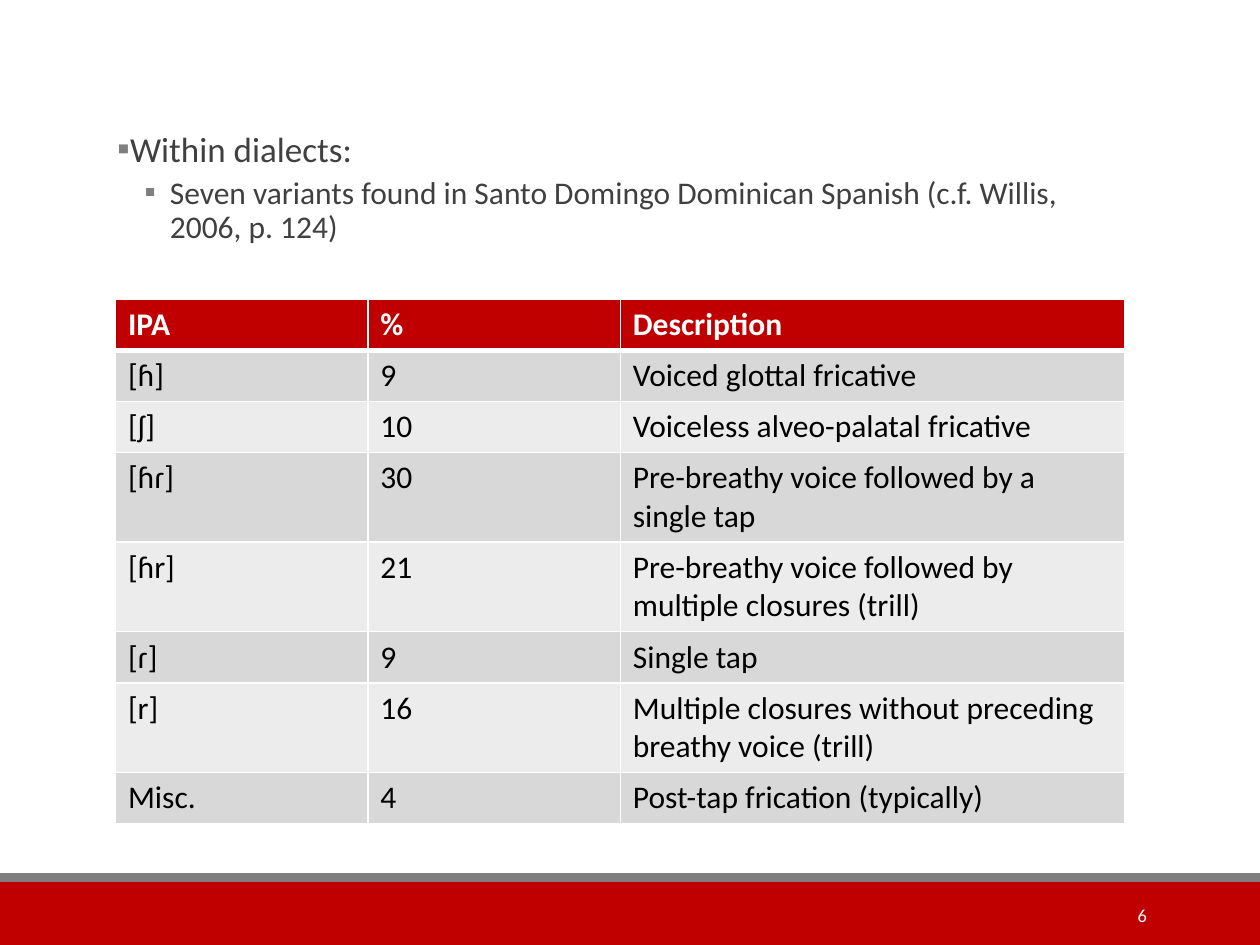
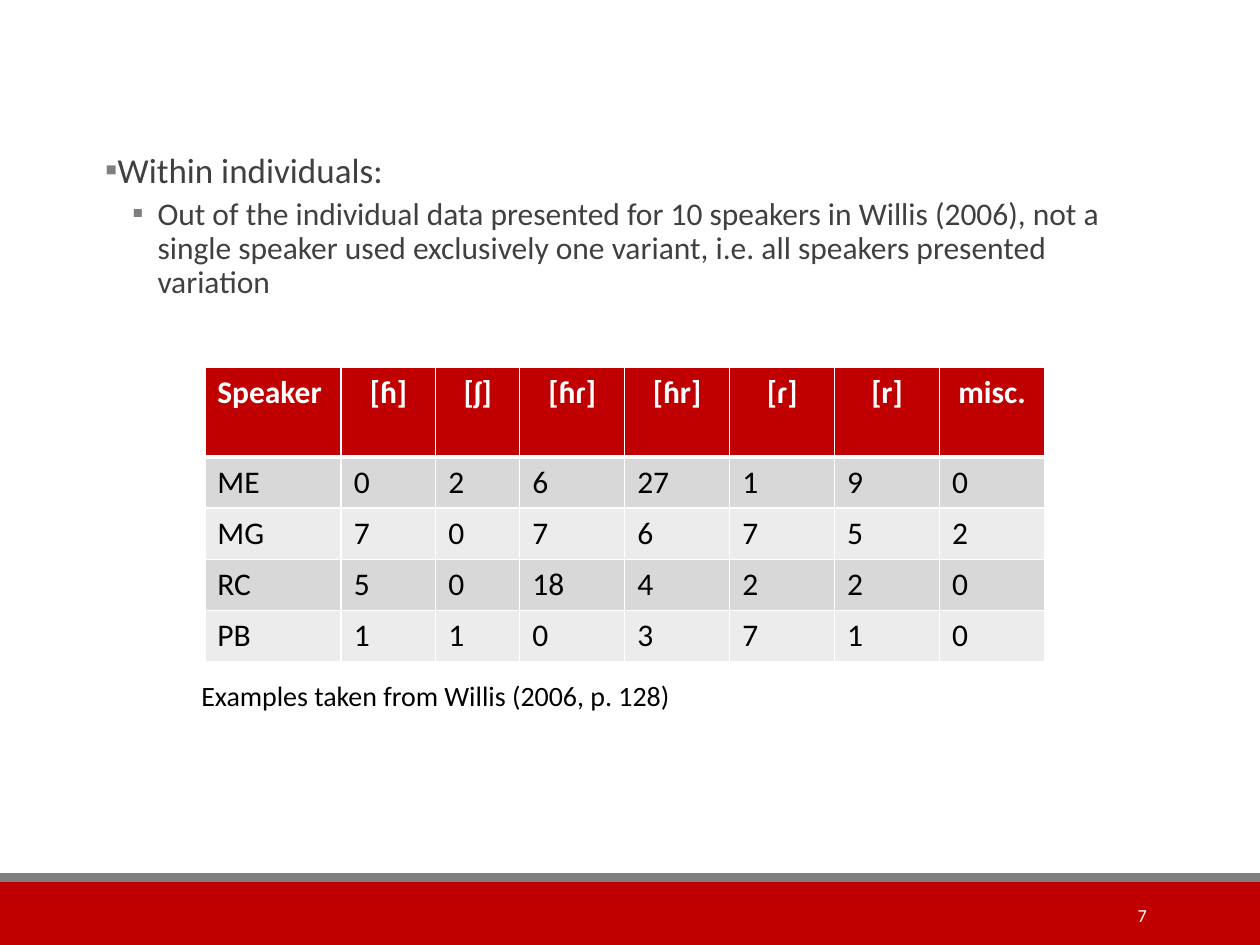
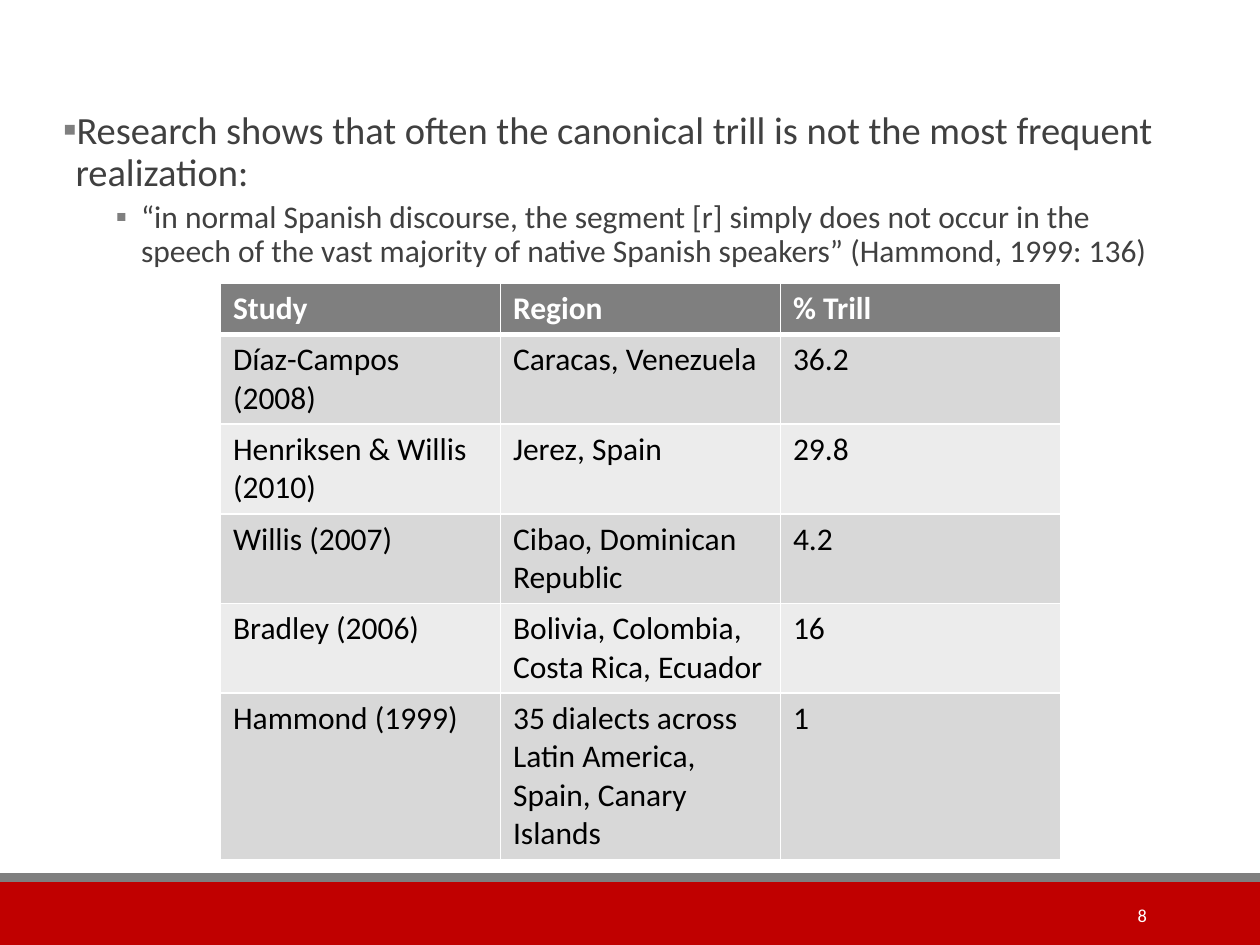
import pptx
import pptx.dml.color
import pptx.enum.shapes
import pptx.enum.text
import pptx.oxml.ns
import pptx.util
from lxml import etree

Pt = pptx.util.Pt
Align = pptx.enum.text.PP_ALIGN
qn = pptx.oxml.ns.qn

FONT = "Calibri"
RED, GRAY, WHITE, BLACK, INK = "C00000", "7F7F7F", "FFFFFF", "000000", "404040"
STRIPES = ("D8D8D8", "ECECEC")
LINE, PAD = 22, 7.2  # height of a table line, and of the cell margins


def rgb(code):
    return pptx.dml.color.RGBColor.from_string(code)


def paint(thing, code):
    thing.fill.solid()
    thing.fill.fore_color.rgb = rgb(code)


def write(para, text, size, color, bold=False):
    run = para.add_run()
    run.text = text
    font = run.font
    font.name, font.size, font.bold = FONT, Pt(size), bold
    font.color.rgb = rgb(color)


def band(slide, top, height, color):
    kind = pptx.enum.shapes.MSO_SHAPE.RECTANGLE
    bar = slide.shapes.add_shape(kind, 0, Pt(top), Pt(720), Pt(height))
    bar.shadow.inherit = False
    paint(bar, color)
    bar.line.fill.background()


def box(slide, left, top, width, height):
    frame = slide.shapes.add_textbox(Pt(left), Pt(top), Pt(width), Pt(height)).text_frame
    frame.word_wrap = True
    return frame


def label(slide, area, text, size, color, align=Align.LEFT):
    frame = box(slide, *area)
    frame.vertical_anchor = pptx.enum.text.MSO_ANCHOR.MIDDLE
    para = frame.paragraphs[0]
    para.alignment = align
    write(para, text, size, color)


def bullet(para, text, size, level, indent, hang, before, after):
    para.level = level
    para.line_spacing = 0.9
    para.space_before, para.space_after = Pt(before), Pt(after)
    props = para._p.get_or_add_pPr()
    props.set("marL", str(Pt(indent)))
    props.set("indent", str(-Pt(hang)))
    tint = etree.SubElement(props, qn("a:buClr"))
    etree.SubElement(tint, qn("a:srgbClr"), val=GRAY)
    etree.SubElement(props, qn("a:buFont"), typeface=FONT)
    etree.SubElement(props, qn("a:buChar"), char="▪")
    write(para, text, size, INK)


def points(slide, area, head, sub, size=20, level=1, indent=30, inset=0):
    """A main point with one point below it."""
    frame = box(slide, *area)
    frame.margin_left = frame.margin_right = Pt(inset)
    bullet(frame.paragraphs[0], head, size, 0, 7.2, 7.2, 12, 2)
    bullet(frame.add_paragraph(), sub, 18, level, indent, 14.4, 2, 4)


def edge(cell, side, width):
    props = cell._tc.get_or_add_tcPr()
    line = etree.SubElement(props, qn("a:ln" + side), w=str(Pt(width)))
    fill = etree.SubElement(line, qn("a:solidFill"))
    etree.SubElement(fill, qn("a:srgbClr"), val=WHITE)


def grid(slide, left, top, widths, lines, rows, color=RED, center=False):
    """A striped table; lines holds the number of text lines in each row."""
    heights = [PAD + LINE * count for count in lines]
    table = slide.shapes.add_table(len(rows), len(widths), Pt(left), Pt(top),
                                   Pt(sum(widths)), Pt(sum(heights))).table
    for col, width in zip(table.columns, widths):
        col.width = Pt(width)
    for r, (row, height) in enumerate(zip(rows, heights)):
        table.rows[r].height = Pt(height)
        head = r == 0
        for c, text in enumerate(row):
            cell = table.cell(r, c)
            for side in "LRTB":
                thick = (r, side) in ((0, "B"), (1, "T"))
                edge(cell, side, 3 if thick else 1)
            paint(cell, color if head else STRIPES[(r - 1) % 2])
            para = cell.text_frame.paragraphs[0]
            if head and center and c:
                para.alignment = Align.CENTER
            write(para, text, 18, WHITE if head else BLACK, head)


def page(deck, number):
    slide = deck.slides.add_slide(deck.slide_layouts[6])
    band(slide, 504, 36, RED)
    band(slide, 499, 5, GRAY)
    label(slide, (584.6, 508.5, 77.8, 28.75), str(number), 10.5, WHITE, Align.RIGHT)
    return slide


def dialects(deck):
    slide = page(deck, 6)
    grid(slide, 66, 171, (144.25, 144.25, 288.5), (1, 1, 1, 2, 2, 1, 2, 1), (
        ("IPA", "%", "Description"),
        ("[ɦ]", "9", "Voiced glottal fricative"),
        ("[ʃ]", "10", "Voiceless alveo-palatal fricative"),
        ("[ɦɾ]", "30", "Pre-breathy voice followed by a single tap"),
        ("[ɦr]", "21", "Pre-breathy voice followed by multiple closures (trill)"),
        ("[ɾ]", "9", "Single tap"),
        ("[r]", "16", "Multiple closures without preceding breathy voice (trill)"),
        ("Misc.", "4", "Post-tap frication (typically)")))
    points(slide, (60, 72, 594, 96), "Within dialects:",
           "Seven variants found in Santo Domingo Dominican Spanish "
           "(c.f. Willis, 2006, p. 124)", inset=7.2)


def speakers(deck):
    slide = page(deck, 7)
    points(slide, (60, 84, 594, 108), "Within individuals:",
           "Out of the individual data presented for 10 speakers in Willis (2006), "
           "not a single speaker used exclusively one variant, i.e. all speakers "
           "presented variation")
    grid(slide, 117, 210, (78, 54, 48) + (60,) * 5, (2, 1, 1, 1, 1), (
        ("Speaker", "[ɦ]", "[ʃ]", "[ɦɾ]", "[ɦr]", "[ɾ]", "[r]", "misc."),
        ("ME", "0", "2", "6", "27", "1", "9", "0"),
        ("MG", "7", "0", "7", "6", "7", "5", "2"),
        ("RC", "5", "0", "18", "4", "2", "2", "0"),
        ("PB", "1", "1", "0", "3", "7", "1", "0")), center=True)
    label(slide, (108, 384, 330, 26.6), "Examples taken from Willis (2006, p. 128)",
          16, BLACK)


def studies(deck):
    slide = page(deck, 8)
    points(slide, (36, 60, 636, 383),
           "Research shows that often the canonical trill is not the most frequent "
           "realization:",
           "“in normal Spanish discourse, the segment [r] simply does not occur in the "
           "speech of the vast majority of native Spanish speakers” "
           "(Hammond, 1999: 136)", size=22, level=2, indent=44.6)
    grid(slide, 126, 162, (160,) * 3, (1, 2, 2, 2, 2, 4), (
        ("Study", "Region", "% Trill"),
        ("Díaz-Campos (2008)", "Caracas, Venezuela", "36.2"),
        ("Henriksen & Willis (2010)", "Jerez, Spain", "29.8"),
        ("Willis (2007)", "Cibao, Dominican Republic", "4.2"),
        ("Bradley (2006)", "Bolivia, Colombia, Costa Rica, Ecuador", "16"),
        ("Hammond (1999)", "35 dialects across Latin America, Spain, Canary Islands",
         "1")), color=GRAY)


def main():
    deck = pptx.Presentation()
    deck.slide_width, deck.slide_height = Pt(720), Pt(540)
    dialects(deck)
    speakers(deck)
    studies(deck)
    deck.save("out.pptx")


if __name__ == "__main__":
    main()
